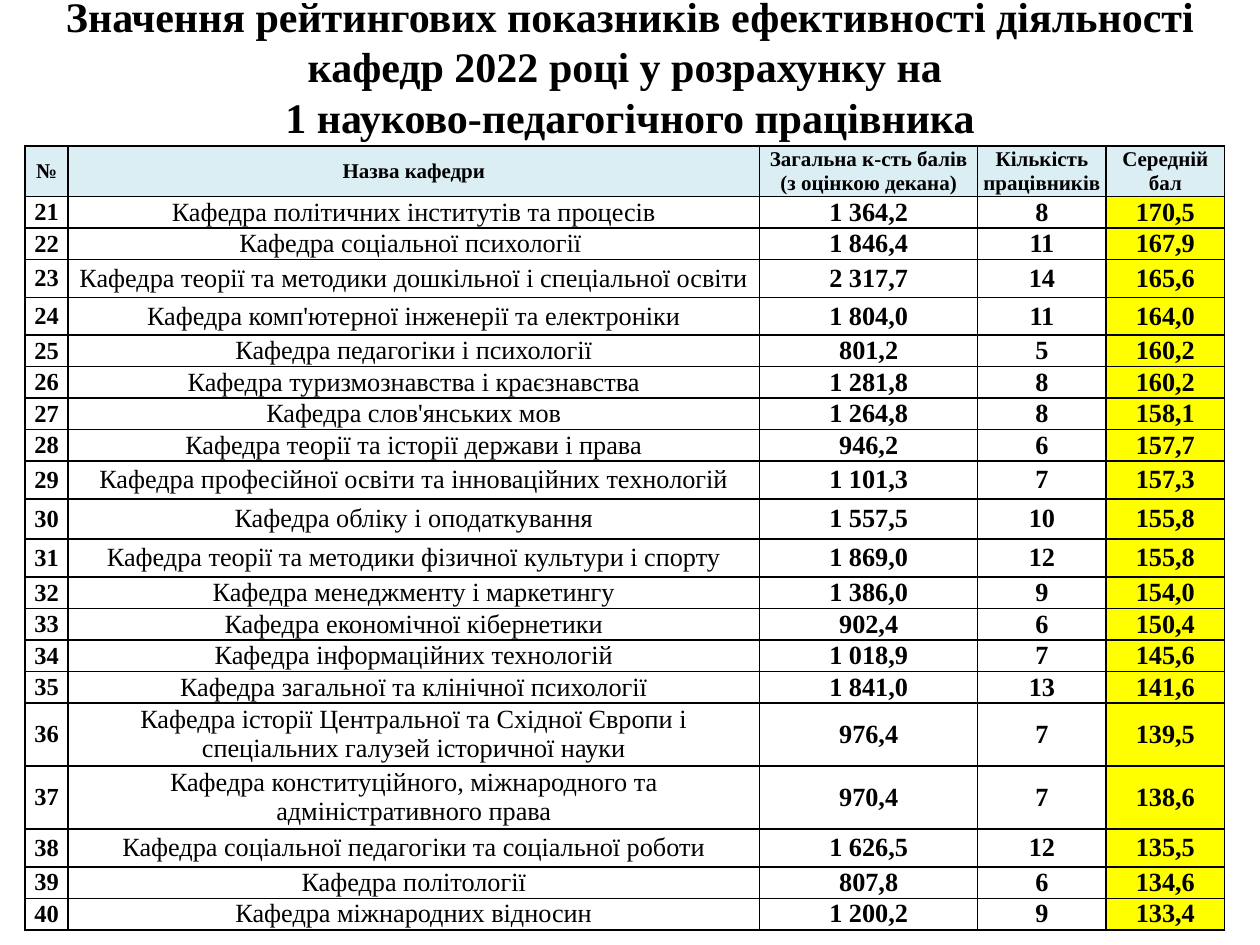
from lxml.etree import SubElement
from pptx import Presentation
from pptx.dml.color import RGBColor as RGB
from pptx.enum.text import MSO_ANCHOR as Anchor, MSO_AUTO_SIZE as AutoSize, PP_ALIGN as Align
from pptx.oxml.ns import qn
from pptx.util import Inches, Pt

COLORS = {"text": "000000", "header": "DBEEF4", "name": "FFFFFF", "score": "FFFF00"}
TITLE = [
    "Значення рейтингових показників ефективності діяльності кафедр 2022 році у розрахунку на ",
    "1 науково-педагогічного працівника",
]
HEADINGS = ["№", "Назва кафедри", "Загальна к-сть балів (з оцінкою декана)",
            "Кількість працівників", "Середній бал"]
FIRST_NUMBER = 21
DEPARTMENTS = [
    ("Кафедра політичних інститутів та процесів", "1 364,2", "8", "170,5"),
    ("Кафедра соціальної психології ", "1 846,4", "11", "167,9"),
    ("Кафедра теорії та методики дошкільної і спеціальної освіти", "2 317,7", "14", "165,6"),
    ("Кафедра комп'ютерної інженерії та електроніки", "1 804,0", "11", "164,0"),
    ("Кафедра педагогіки і психології", "801,2", "5", "160,2"),
    ("Кафедра туризмознавства і краєзнавства", "1 281,8", "8", "160,2"),
    ("Кафедра слов'янських мов", "1 264,8", "8", "158,1"),
    ("Кафедра теорії та історії держави і права", "946,2", "6", "157,7"),
    ("Кафедра професійної освіти та інноваційних технологій", "1 101,3", "7", "157,3"),
    ("Кафедра обліку і оподаткування", "1 557,5", "10", "155,8"),
    ("Кафедра теорії та методики фізичної культури і спорту", "1 869,0", "12", "155,8"),
    ("Кафедра менеджменту і маркетингу", "1 386,0", "9", "154,0"),
    ("Кафедра економічної кібернетики", "902,4", "6", "150,4"),
    ("Кафедра інформаційних технологій", "1 018,9", "7", "145,6"),
    ("Кафедра загальної та клінічної психології", "1 841,0", "13", "141,6"),
    ("Кафедра історії Центральної та Східної Європи і спеціальних галузей історичної науки",
     "976,4", "7", "139,5"),
    ("Кафедра конституційного, міжнародного та адміністративного права", "970,4", "7", "138,6"),
    ("Кафедра соціальної педагогіки та соціальної роботи", "1 626,5", "12", "135,5"),
    ("Кафедра політології", "807,8", "6", "134,6"),
    ("Кафедра міжнародних відносин", "1 200,2", "9", "133,4"),
]
COLUMN_WIDTHS = [0.34, 5.49, 1.73, 1.02, 0.94]
ROW_HEIGHT = 0.25
SPECIAL_HEIGHTS = {0: 0.4, 3: 0.3, 4: 0.3, 9: 0.3, 10: 0.32, 11: 0.3, 16: 0.5, 17: 0.5, 18: 0.3}
HEADER_FORMAT = {"size": 12, "bold": True, "fill": "header"}
COLUMN_FORMATS = [
    {"size": 14, "bold": True, "fill": None},
    {"size": 15, "bold": False, "fill": "name"},
    {"size": 15, "bold": True, "fill": None},
    {"size": 15, "bold": True, "fill": None},
    {"size": 15, "bold": True, "fill": "score"},
]


class RatingSlide:
    """Holds the text style and the current slide."""

    font_name = "Times New Roman"
    border_width = Pt(1)
    cell_format = {"margin_left": Inches(0.02), "margin_right": Inches(0.02),
                   "margin_top": 0, "margin_bottom": 0, "vertical_anchor": Anchor.MIDDLE}

    def __init__(self, deck):
        self.slide = deck.slides.add_slide(deck.slide_layouts[5])

    def apply(self, target, values):
        for name, value in values.items():
            setattr(target, name, value)

    def style_text(self, paragraph, size, bold):
        paragraph.alignment = Align.CENTER
        for run in paragraph.runs:
            self.apply(run.font, {"name": self.font_name, "size": Pt(size), "bold": bold})
            run.font.color.rgb = RGB.from_string(COLORS["text"])

    def title(self, lines, left, top, width, height):
        heading = self.slide.shapes.title
        self.apply(heading, {"left": Inches(left), "top": Inches(top),
                             "width": Inches(width), "height": Inches(height)})
        self.apply(heading.text_frame, {"word_wrap": True, "auto_size": AutoSize.NONE,
                                        "vertical_anchor": Anchor.MIDDLE})
        paragraph = heading.text_frame.paragraphs[0]
        for index, line in enumerate(lines):
            if index:
                paragraph.add_line_break()
            paragraph.add_run().text = line
        self.style_text(paragraph, 24, True)

    def border(self, cell):
        properties = cell._tc.get_or_add_tcPr()
        for position, side in enumerate(("a:lnL", "a:lnR", "a:lnT", "a:lnB")):
            line = SubElement(properties, qn(side), w=str(self.border_width))
            color = SubElement(line, qn("a:solidFill"))
            SubElement(color, qn("a:srgbClr"), val=COLORS["text"])
            properties.insert(position, line)

    def cell(self, cell, text, size, bold, fill):
        cell.text = text
        self.apply(cell, self.cell_format)
        self.style_text(cell.text_frame.paragraphs[0], size, bold)
        if fill:
            cell.fill.solid()
            cell.fill.fore_color.rgb = RGB.from_string(COLORS[fill])
        else:
            cell.fill.background()
        self.border(cell)

    def table(self, rows, left, top):
        heights = [SPECIAL_HEIGHTS.get(index, ROW_HEIGHT) for index in range(len(rows))]
        ratings = self.slide.shapes.add_table(
            len(rows), len(COLUMN_WIDTHS), Inches(left), Inches(top),
            Inches(sum(COLUMN_WIDTHS)), Inches(sum(heights))).table
        self.apply(ratings, {"first_row": False, "horz_banding": False})
        for column, width in zip(ratings.columns, COLUMN_WIDTHS):
            column.width = Inches(width)
        for index, (row, height, texts) in enumerate(zip(ratings.rows, heights, rows)):
            row.height = Inches(height)
            for cell, text, column_format in zip(row.cells, texts, COLUMN_FORMATS):
                self.cell(cell, text, **(column_format if index else HEADER_FORMAT))


def main():
    deck = Presentation()
    deck.slide_width, deck.slide_height = Inches(10), Inches(7.5)
    rating = RatingSlide(deck)
    numbered = [(str(number), *department)
                for number, department in enumerate(DEPARTMENTS, FIRST_NUMBER)]
    rating.table([HEADINGS, *numbered], 0.2, 1.16)
    rating.title(TITLE, 0, 0.14, 10, 0.77)
    deck.save("out.pptx")


if __name__ == "__main__":
    main()
